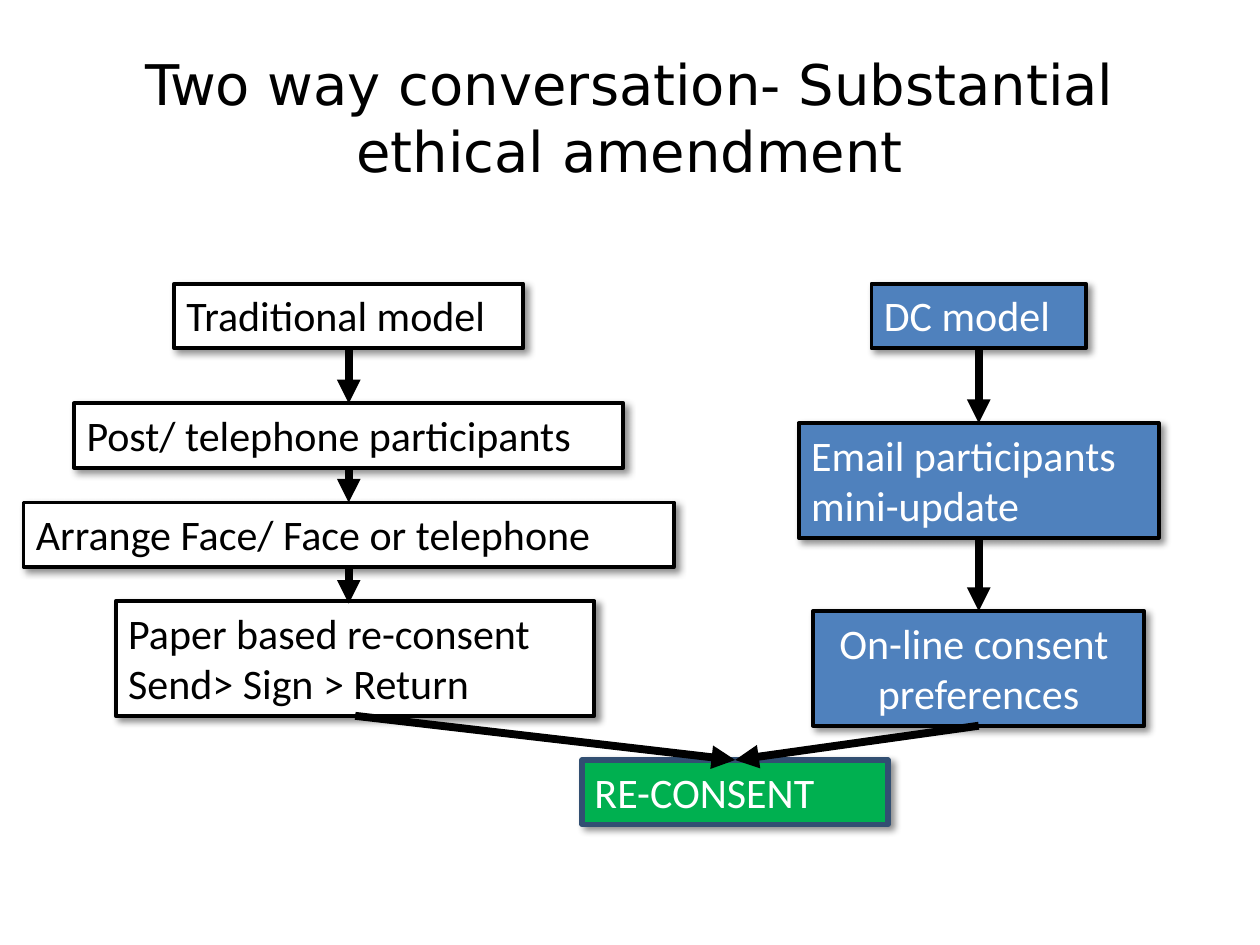
from dataclasses import dataclass
from typing import Optional

from lxml.etree import SubElement
from pptx import Presentation
from pptx.dml.color import RGBColor as Rgb
from pptx.enum.shapes import MSO_CONNECTOR as Connector, MSO_SHAPE as Shape
from pptx.enum.text import MSO_ANCHOR as Anchor, PP_ALIGN as Align
from pptx.oxml.ns import qn
from pptx.util import Cm, Pt

COLOURS = {
    "black": "000000",
    "white": "FFFFFF",
    "blue": "4F81BD",
    "green": "00B050",
    "navy": "324F72",
}
LEFT_COLUMN, RIGHT_COLUMN = 7.03, 19.73
BOX_HEIGHTS = {1: 1.3, 2: 2.31}
TOP_SIDE, BOTTOM_SIDE = 0, 2


@dataclass
class Step:
    name: str
    lines: tuple[str, ...]
    centre: float
    top: float
    width: float
    fill: str = "white"
    ink: str = "black"
    border: str = "black"
    border_width: float = 2.25
    align: Align = Align.LEFT


@dataclass
class Arrow:
    start: str
    end: str
    loose_end: Optional[tuple[float, float]] = None


STEPS = [
    Step("traditional", ("Traditional model",), LEFT_COLUMN, 5.72, 7.04),
    Step("post", ("Post/ telephone participants",), LEFT_COLUMN, 8.13, 11.07),
    Step("arrange", ("Arrange Face/ Face or telephone",), LEFT_COLUMN, 10.13, 13.11),
    Step("reconsent", ("RE-CONSENT",), 14.82, 15.32, 6.17, "green", "white", "navy", 3),
    Step("dc", ("DC model",), RIGHT_COLUMN, 5.72, 4.32, "blue", "white"),
    Step("email", ("Email participants", "mini-update"), RIGHT_COLUMN, 8.53, 7.26,
         "blue", "white"),
    Step("online", ("On-line consent ", "preferences"), RIGHT_COLUMN, 12.32, 6.68,
         "blue", "white", align=Align.CENTER),
    Step("paper", ("Paper based re-consent", "Send> Sign > Return"), 7.16, 12.12, 9.65),
]
ARROWS = [
    Arrow("traditional", "post"),
    Arrow("post", "arrange"),
    Arrow("arrange", "paper", (LEFT_COLUMN, 12.17)),
    Arrow("paper", "reconsent"),
    Arrow("dc", "email"),
    Arrow("email", "online"),
    Arrow("online", "reconsent"),
]


def colour(name: str) -> Rgb:
    return Rgb.from_string(COLOURS[name])


def add_run(para, text: str, font: str, size: float, ink: str) -> None:
    span = para.add_run()
    span.text = text
    span.font.name = font
    span.font.size = Pt(size)
    span.font.color.rgb = colour(ink)


def add_shadow(box) -> None:
    box.shadow.inherit = False
    effects = box._element.spPr.find(qn("a:effectLst"))
    shadow = SubElement(effects, qn("a:outerShdw"), blurRad=str(Pt(4)),
                        dist=str(Pt(3)), dir=str(45 * 60000),
                        algn="tl", rotWithShape="0")
    tint = SubElement(shadow, qn("a:srgbClr"), val=COLOURS["black"])
    SubElement(tint, qn("a:alpha"), val="43000")


def add_step(page, step: Step):
    box = page.shapes.add_shape(
        Shape.RECTANGLE, Cm(step.centre - step.width / 2), Cm(step.top),
        Cm(step.width), Cm(BOX_HEIGHTS[len(step.lines)]))
    box.fill.solid()
    box.fill.fore_color.rgb = colour(step.fill)
    box.line.color.rgb = colour(step.border)
    box.line.width = Pt(step.border_width)
    add_shadow(box)
    frame = box.text_frame
    frame.word_wrap = True
    frame.vertical_anchor = Anchor.TOP
    for index, line in enumerate(step.lines):
        para = frame.add_paragraph() if index else frame.paragraphs[0]
        para.alignment = step.align
        add_run(para, line, "Calibri", 24, step.ink)
    return box


def add_arrow(page, arrow: Arrow, boxes: dict) -> None:
    end_x, end_y = arrow.loose_end or (0, 0)
    connector = page.shapes.add_connector(
        Connector.STRAIGHT, 0, 0, Cm(end_x), Cm(end_y))
    connector.begin_connect(boxes[arrow.start], BOTTOM_SIDE)
    if arrow.loose_end is None:
        connector.end_connect(boxes[arrow.end], TOP_SIDE)
    connector.line.color.rgb = colour("black")
    connector.line.width = Pt(4.5)
    SubElement(connector.line._get_or_add_ln(), qn("a:tailEnd"), type="triangle")
    SubElement(connector._element.spPr, qn("a:effectLst"))


def add_title(page, text: str) -> None:
    title = page.shapes.title
    title.left, title.top = Cm(1.27), Cm(0.76)
    title.width, title.height = Cm(22.86), Cm(3.18)
    frame = title.text_frame
    frame.word_wrap = True
    frame.vertical_anchor = Anchor.MIDDLE
    para = frame.paragraphs[0]
    para.alignment = Align.CENTER
    add_run(para, text, "DejaVu Sans", 32, "black")


def main() -> None:
    deck = Presentation()
    deck.slide_width, deck.slide_height = Cm(25.4), Cm(19.05)
    page = deck.slides.add_slide(deck.slide_layouts[5])
    add_title(page, "Two way conversation- Substantial ethical amendment")
    boxes = {step.name: add_step(page, step) for step in STEPS}
    for arrow in ARROWS:
        add_arrow(page, arrow, boxes)
    deck.save("out.pptx")


if __name__ == "__main__":
    main()
